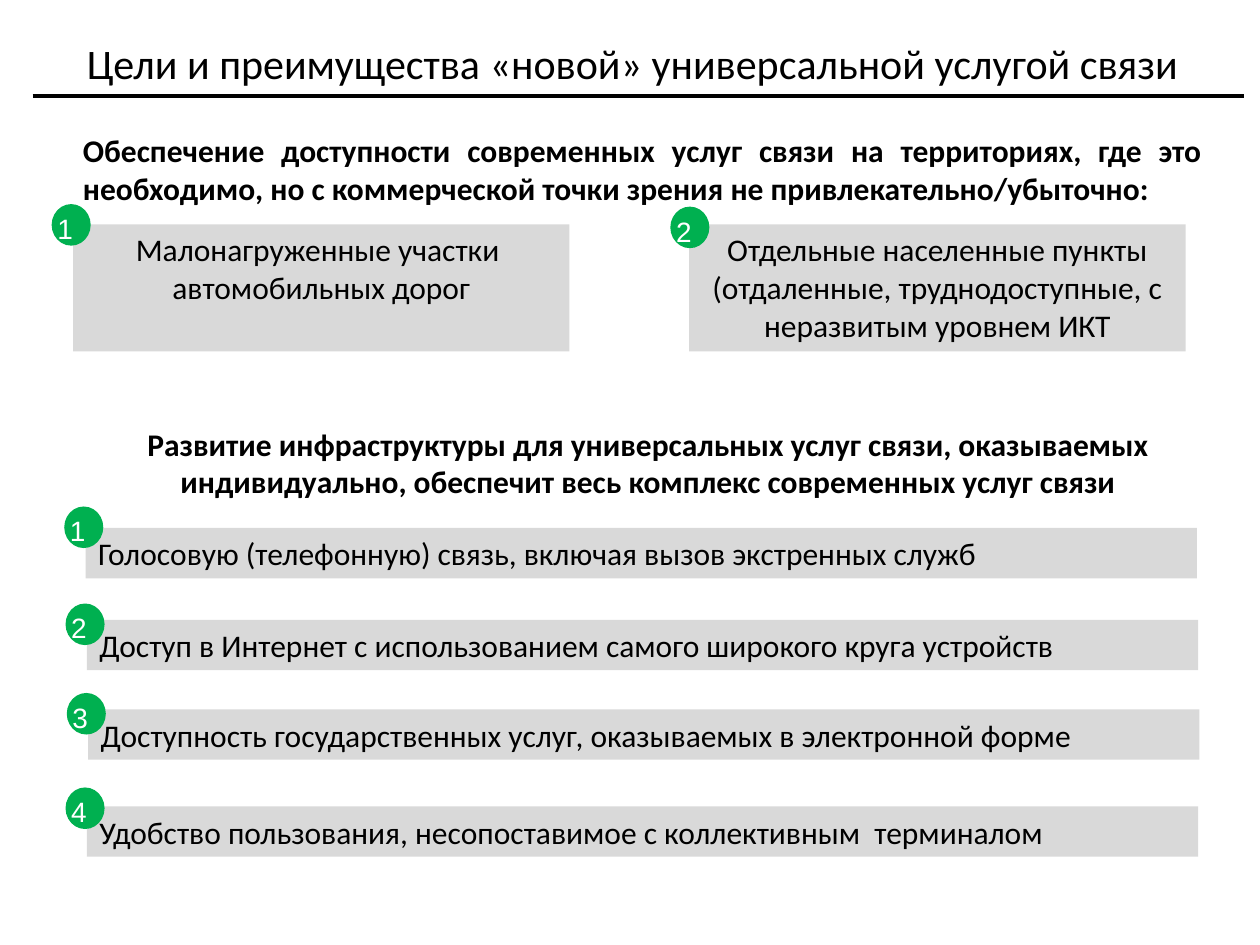
from dataclasses import dataclass

from lxml import etree
from pptx import Presentation
from pptx.dml.color import RGBColor
from pptx.enum.shapes import MSO_CONNECTOR, MSO_SHAPE
from pptx.enum.text import MSO_ANCHOR, PP_ALIGN
from pptx.oxml.ns import qn
from pptx.util import Inches, Pt

RECT, OVAL = MSO_SHAPE.RECTANGLE, MSO_SHAPE.OVAL
STRAIGHT = MSO_CONNECTOR.STRAIGHT
TOP, MIDDLE = MSO_ANCHOR.TOP, MSO_ANCHOR.MIDDLE
LEFT, CENTER, JUSTIFY = PP_ALIGN.LEFT, PP_ALIGN.CENTER, PP_ALIGN.JUSTIFY


@dataclass(frozen=True)
class Theme:
    ink: RGBColor = RGBColor(0, 0, 0)
    panel: RGBColor = RGBColor(0xD9, 0xD9, 0xD9)
    badge: RGBColor = RGBColor(0x00, 0xB0, 0x50)
    badge_ink: RGBColor = RGBColor(0xFF, 0xFF, 0xFF)
    body_font: str = "Calibri"
    badge_font: str = "Arial"
    title_size: int = 24
    body_size: int = 18
    badge_size: int = 16
    badge_leading: int = 20
    rule_width: float = 2.25


def write(shape, text, *, font, size, color, bold=False, align=LEFT,
          anchor=TOP, leading=None, inset=None):
    """Put one formatted paragraph into a shape."""
    tf = shape.text_frame
    tf.word_wrap = True
    tf.vertical_anchor = anchor
    if inset is not None:
        tf.margin_left = tf.margin_right = Inches(inset)
        tf.margin_top = tf.margin_bottom = Inches(inset)
    p = tf.paragraphs[0]
    p.alignment = align
    if leading:
        p.line_spacing = Pt(leading)
    r = p.add_run()
    r.text = text
    r.font.name, r.font.size, r.font.bold = font, Pt(size), bold
    r.font.color.rgb = color


class SlideBuilder:
    def __init__(self, slide, theme):
        self.s, self.theme = slide, theme

    def body(self, shape, text, **fmt):
        t = self.theme
        write(shape, text, **{"font": t.body_font, "size": t.body_size,
                              "color": t.ink, **fmt})

    def title(self, text, x, y, w, h):
        sp = self.s.shapes.title
        sp.left, sp.top, sp.width, sp.height = map(Inches, (x, y, w, h))
        self.body(sp, text, size=self.theme.title_size, align=CENTER,
                  anchor=MIDDLE)

    def rule(self, x1, x2, y):
        line = self.s.shapes.add_connector(
            STRAIGHT, Inches(x1), Inches(y), Inches(x2), Inches(y))
        line.line.color.rgb = self.theme.ink
        line.line.width = Pt(self.theme.rule_width)
        etree.SubElement(line._element.spPr, qn("a:effectLst"))

    def heading(self, text, x, y, w, h, align):
        sp = self.s.shapes.add_textbox(*map(Inches, (x, y, w, h)))
        self.body(sp, text, bold=True, align=align)

    def filled(self, kind, color, x, y, w, h):
        sp = self.s.shapes.add_shape(kind, *map(Inches, (x, y, w, h)))
        sp.shadow.inherit = False
        sp.fill.solid()
        sp.fill.fore_color.rgb = color
        sp.line.fill.background()
        return sp

    def panel(self, text, x, y, w, h, align):
        self.body(self.filled(RECT, self.theme.panel, x, y, w, h), text,
                  align=align)

    def badge(self, number, x, y):
        t = self.theme
        write(self.filled(OVAL, t.badge, x, y, 0.31, 0.33), str(number),
              font=t.badge_font, size=t.badge_size, color=t.badge_ink,
              leading=t.badge_leading, inset=0)


# Text, panel left, badge left, badge top
CARDS = [
    ("Малонагруженные участки  автомобильных дорог", 0.58, 0.41, 1.62),
    ("Отдельные населенные пункты (отдаленные, труднодоступные, "
     "с неразвитым уровнем ИКТ", 5.47, 5.32, 1.64),
]
# Text, panel left, panel top, badge top
SERVICES = [
    ("Голосовую (телефонную) связь, включая вызов экстренных служб",
     0.68, 4.19, 4.02),
    ("Доступ в Интернет с использованием самого широкого круга устройств",
     0.69, 4.92, 4.79),
    ("Доступность государственных услуг, оказываемых в электронной форме",
     0.7, 5.63, 5.5),
    ("Удобство пользования, несопоставимое с коллективным  терминалом",
     0.69, 6.4, 6.25),
]


def main():
    prs = Presentation()
    prs.slide_width, prs.slide_height = Inches(10), Inches(7.5)
    b = SlideBuilder(prs.slides.add_slide(prs.slide_layouts[5]), Theme())

    # Title and rule
    b.title("Цели и преимущества «новой» универсальной услугой связи",
            0.39, 0.28, 9.26, 0.44)
    b.rule(0.26, 9.87, 0.76)

    # Where the service is needed
    b.heading("Обеспечение доступности современных услуг связи на территориях, "
              "где это необходимо, но с коммерческой точки зрения "
              "не привлекательно/убыточно:", 0.56, 0.99, 9.08, 0.71, JUSTIFY)
    for n, (text, x, badge_x, badge_y) in enumerate(CARDS, 1):
        b.panel(text, x, 1.78, 3.94, 1.01, CENTER)
        b.badge(n, badge_x, badge_y)

    # What the service provides
    b.heading("Развитие инфраструктуры для универсальных услуг связи, "
              "оказываемых индивидуально, обеспечит весь комплекс "
              "современных услуг связи", 0.66, 3.32, 8.97, 0.71, CENTER)
    for n, (text, x, y, badge_y) in enumerate(SERVICES, 1):
        b.panel(text, x, y, 8.82, 0.4, JUSTIFY)
        b.badge(n, x - 0.17, badge_y)

    prs.save("out.pptx")


if __name__ == "__main__":
    main()
